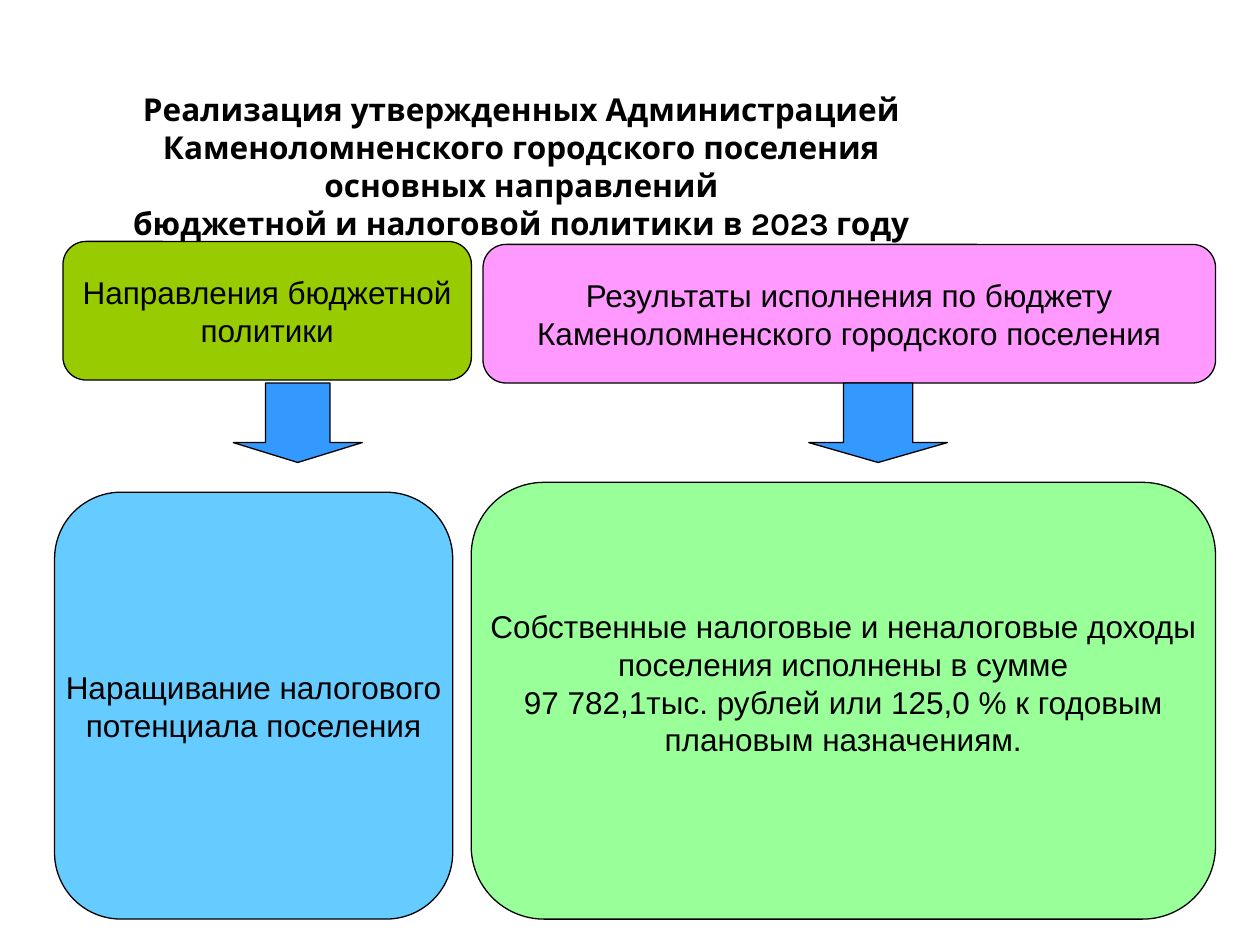
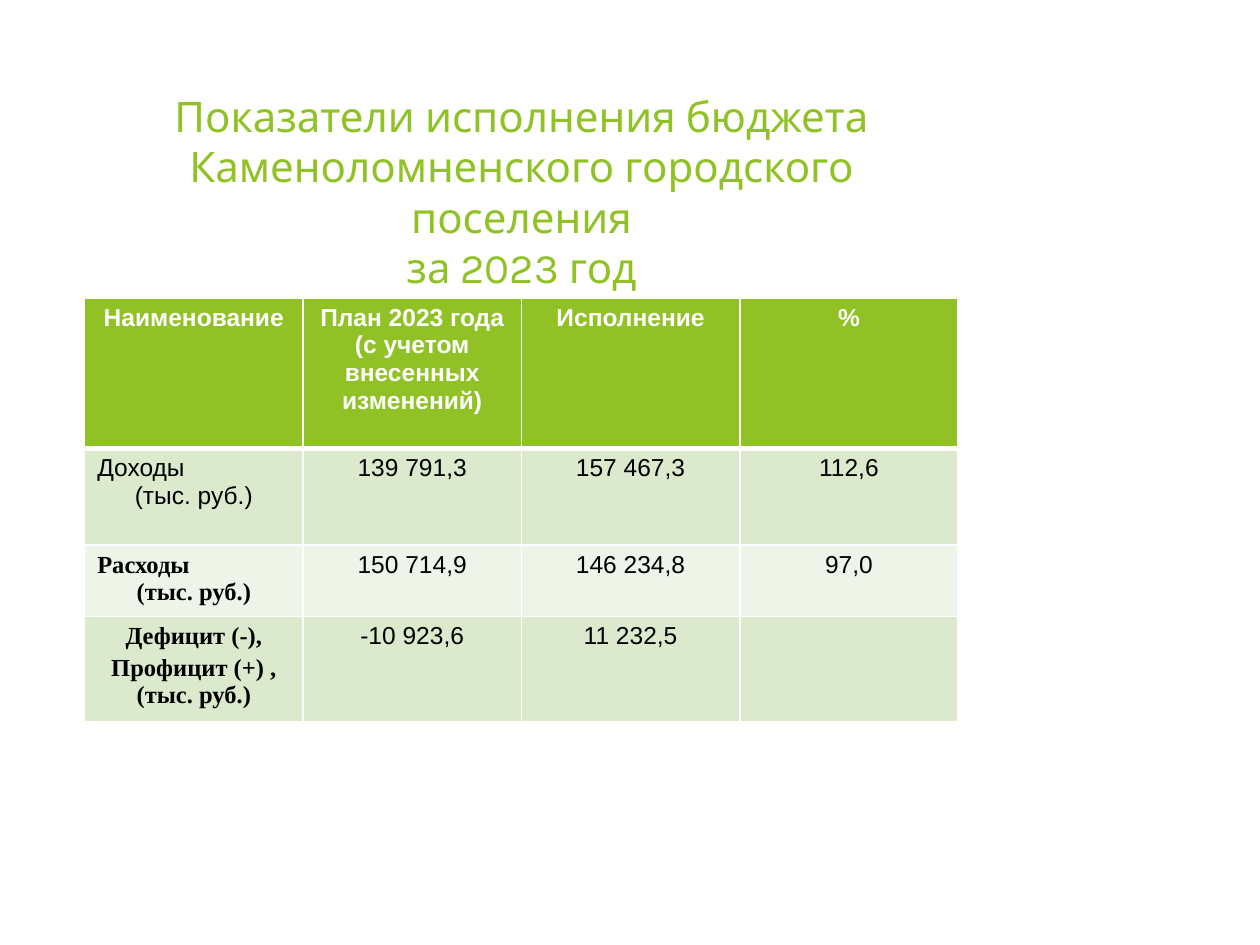
from dataclasses import dataclass

from lxml import etree
from pptx import Presentation
from pptx.dml.color import RGBColor
from pptx.enum.shapes import MSO_SHAPE
from pptx.enum.text import MSO_ANCHOR, PP_ALIGN
from pptx.oxml.ns import qn
from pptx.util import Pt

ROUNDED = MSO_SHAPE.FLOWCHART_ALTERNATE_PROCESS
DOWN_ARROW = MSO_SHAPE.DOWN_ARROW
CENTER, LEFT = PP_ALIGN.CENTER, PP_ALIGN.LEFT
TOP, MIDDLE = MSO_ANCHOR.TOP, MSO_ANCHOR.MIDDLE

BLACK, WHITE, GREEN = "000000", "FFFFFF", "90C226"
ARROW_BLUE = "3399FF"
BAND_DARK, BAND_LIGHT = "DBE9CD", "EEF4E8"
TITLE_FONT, BODY_FONT, SERIF_FONT = "Karla", "Arial", "Times New Roman"

TITLE_AREA = (48, 48, 500, 104)
TABLE_LEFT, TABLE_TOP, TABLE_WIDTH = 48.4, 170.2, 499.2
ROW_HEIGHTS = (86, 55.2, 38.2, 56)


@dataclass
class Panel:
    left: float
    top: float
    width: float
    height: float
    fill: str
    lines: tuple[str, ...]
    bottom_inset: float = 3.6


@dataclass
class Arrow:
    left: float
    width: float
    top: float = 218.9
    height: float = 45.4


@dataclass
class Row:
    label: tuple[str, ...]
    values: tuple[str, ...]
    fill: str
    label_format: dict
    label_align: PP_ALIGN = LEFT
    space_before: float = 0


PANELS = (
    Panel(36, 138, 233.4, 79.2, "99CC00", ("Направления бюджетной", "политики")),
    Panel(276, 139.7, 418.6, 79.2, "FF99FF",
          ("Результаты исполнения по бюджету", "Каменоломненского городского поселения")),
    Panel(31.2, 281.3, 227.5, 243.9, "66CCFF",
          ("Наращивание налогового", "потенциала поселения")),
    Panel(269.3, 275.6, 425.3, 249.6, "99FF99",
          ("Собственные налоговые и неналоговые доходы", "поселения исполнены в сумме",
           "97 782,1тыс. рублей или 125,0 % к годовым", "плановым назначениям."),
          bottom_inset=24.3),
)
ARROWS = (Arrow(133.3, 73.7), Arrow(462.2, 79.2))

PLAIN = {"name": BODY_FONT, "size": Pt(14), "bold": False}
HEADER = PLAIN | {"bold": True}
SERIF = HEADER | {"name": SERIF_FONT}

COLUMN_HEADS = (
    ("Наименование",),
    ("План 2023 года", "(с учетом внесенных изменений)"),
    ("Исполнение",),
    ("%",),
)
ROWS = (
    Row(("Доходы", "(тыс. руб.)"), ("139 791,3", "157 467,3", "112,6"), BAND_DARK, PLAIN),
    Row(("Расходы", "(тыс. руб.)"), ("150 714,9", "146 234,8", "97,0"), BAND_LIGHT, SERIF),
    Row(("Дефицит (-),", "Профицит (+) , (тыс. руб.)"), ("-10 923,6", "11 232,5", ""),
        BAND_DARK, SERIF, CENTER, 2.8),
)


def rgb(value: str) -> RGBColor:
    return RGBColor.from_string(value)


def set_attributes(target, values: dict) -> None:
    for name, value in values.items():
        setattr(target, name, value)


def write_lines(tf, lines: tuple[str, ...], font: dict, color: str,
                first_align: PP_ALIGN = CENTER, space_before: float = 0) -> None:
    """Write one paragraph per line; all but the first are centred."""
    for i, line in enumerate(lines):
        p = tf.add_paragraph() if i else tf.paragraphs[0]
        p.text = line
        p.alignment = CENTER if i else first_align
        p.space_before = Pt(space_before if i else 0)
        for r in p.runs:
            set_attributes(r.font, font)
            r.font.color.rgb = rgb(color)


def add_title(s, text: str, size: float, color: str, bold: bool) -> None:
    tf = s.shapes.add_textbox(*map(Pt, TITLE_AREA)).text_frame
    set_attributes(tf, {"word_wrap": True, "vertical_anchor": TOP})
    write_lines(tf, (text,), {"name": TITLE_FONT, "size": Pt(size), "bold": bold}, color)


def add_outlined(s, kind: MSO_SHAPE, area: Panel | Arrow, fill: str):
    sp = s.shapes.add_shape(kind, Pt(area.left), Pt(area.top), Pt(area.width), Pt(area.height))
    sp.shadow.inherit = False
    sp.fill.solid()
    sp.fill.fore_color.rgb = rgb(fill)
    sp.line.color.rgb = rgb(BLACK)
    sp.line.width = Pt(0.75)
    return sp


def add_panel(s, panel: Panel) -> None:
    tf = add_outlined(s, ROUNDED, panel, panel.fill).text_frame
    set_attributes(tf, {"word_wrap": False, "vertical_anchor": MIDDLE,
                        "margin_bottom": Pt(panel.bottom_inset)})
    write_lines(tf, panel.lines, {"name": BODY_FONT, "size": Pt(18)}, BLACK)


def add_arrow(s, arrow: Arrow) -> None:
    sp = add_outlined(s, DOWN_ARROW, arrow, ARROW_BLUE)
    sp.adjustments[0], sp.adjustments[1] = 0.5, 0.25


def style_cell(cell, fill: str, top: float = 1, bottom: float = 1) -> None:
    """Give the cell white borders, then its fill, in schema order."""
    tc_pr = cell._tc.get_or_add_tcPr()
    for side, width in {"L": 1, "R": 1, "T": top, "B": bottom}.items():
        ln = etree.SubElement(tc_pr, qn(f"a:ln{side}"), w=str(Pt(width)))
        solid = etree.SubElement(ln, qn("a:solidFill"))
        etree.SubElement(solid, qn("a:srgbClr"), val=WHITE)
    cell.fill.solid()
    cell.fill.fore_color.rgb = rgb(fill)


def add_budget_table(s) -> None:
    frame = s.shapes.add_table(len(ROW_HEIGHTS), len(COLUMN_HEADS), Pt(TABLE_LEFT),
                               Pt(TABLE_TOP), Pt(TABLE_WIDTH), Pt(sum(ROW_HEIGHTS)))
    table = frame.table
    for row, height in zip(table.rows, ROW_HEIGHTS):
        row.height = Pt(height)
    for c, head in enumerate(COLUMN_HEADS):
        cell = table.cell(0, c)
        style_cell(cell, GREEN, bottom=3)
        write_lines(cell.text_frame, head, HEADER, WHITE)
    for i, row in enumerate(ROWS, start=1):
        for c in range(len(COLUMN_HEADS)):
            style_cell(table.cell(i, c), row.fill, top=3 if i == 1 else 1)
        write_lines(table.cell(i, 0).text_frame, row.label, row.label_format, BLACK,
                    row.label_align, row.space_before)
        for c, value in enumerate(row.values, start=1):
            write_lines(table.cell(i, c).text_frame, (value,), PLAIN, BLACK)


def build_policy_slide(prs) -> None:
    s = prs.slides.add_slide(prs.slide_layouts[6])
    add_title(s, "Реализация утвержденных Администрацией\n"
                 "Каменоломненского городского поселения основных направлений\n"
                 "бюджетной и налоговой политики в 2023 году", 18, BLACK, True)
    for panel in PANELS:
        add_panel(s, panel)
    for arrow in ARROWS:
        add_arrow(s, arrow)


def build_indicators_slide(prs) -> None:
    s = prs.slides.add_slide(prs.slide_layouts[6])
    add_title(s, "Показатели исполнения бюджета\n"
                 "Каменоломненского городского поселения\nза 2023 год", 24, GREEN, False)
    add_budget_table(s)


def main() -> None:
    prs = Presentation()
    set_attributes(prs, {"slide_width": Pt(720), "slide_height": Pt(540)})
    build_policy_slide(prs)
    build_indicators_slide(prs)
    prs.save("out.pptx")


if __name__ == "__main__":
    main()
